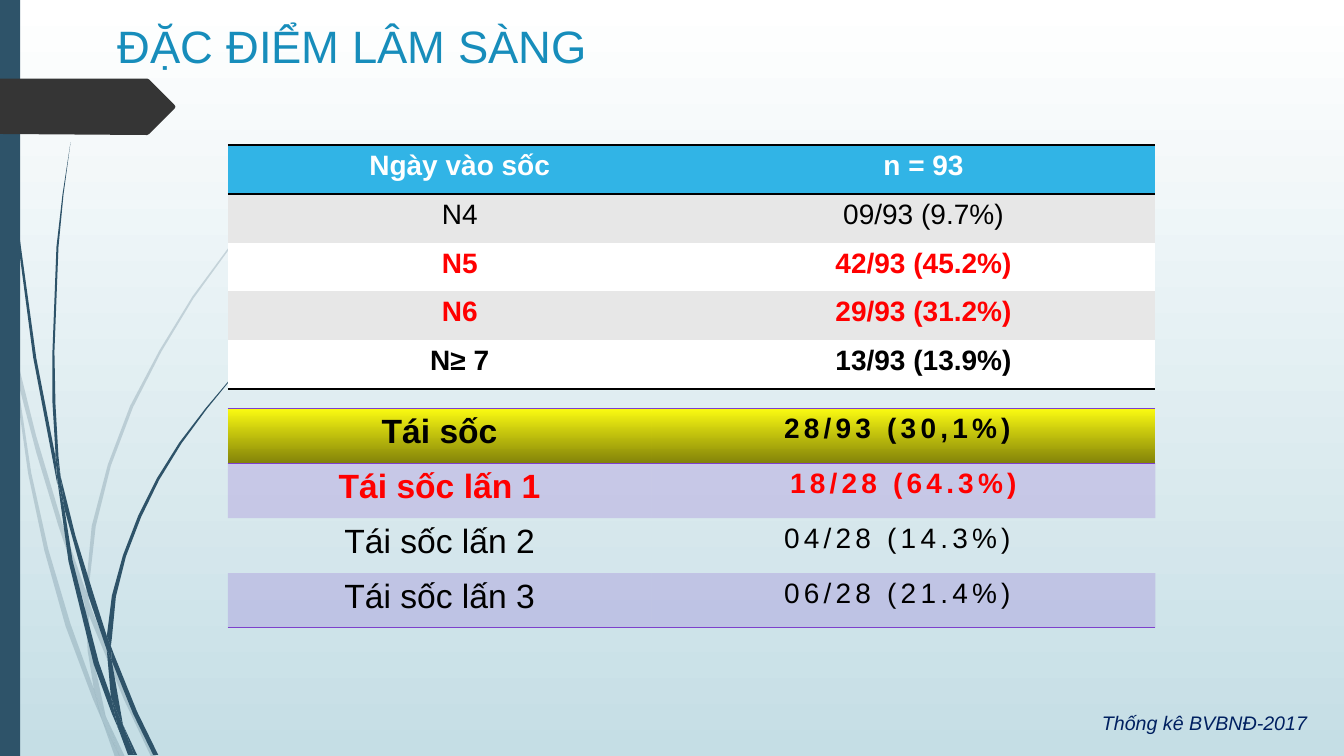
from dataclasses import dataclass

from lxml.etree import SubElement
from pptx import Presentation
from pptx.dml.color import RGBColor
from pptx.enum.shapes import MSO_SHAPE
from pptx.enum.text import MSO_ANCHOR, MSO_AUTO_SIZE, PP_ALIGN
from pptx.oxml import parse_xml
from pptx.oxml.ns import nsdecls, qn
from pptx.util import Emu, Pt

PX = 9144  # one px is a hundredth of an inch


@dataclass(frozen=True)
class Theme:
    font: str = "Arial"
    title: str = "178DBB"
    source: str = "002060"
    slate: str = "2E5369"
    tag: str = "353535"
    header: str = "31B4E6"
    band: str = "E7E7E7"
    white: str = "FFFFFF"
    black: str = "000000"
    red: str = "FF0000"
    violet: str = "7E40CC"
    sky: tuple = ("FFFFFF", "C5DEE5")
    gold: tuple = ("FBFB11", "838309")
    title_size: float = 32.4
    label_size: int = 24
    body_size: int = 20
    source_size: int = 14
    faint: int = 20


T = Theme()
NO_STYLE = "{2D5ABB26-0587-4C30-8999-92F81FD0307C}"

# Grass blades: outline points in px
PALE_BLADES = [
    [(0, 282), (9, 322), (11, 350), (10, 344), (0, 299)],
    [(14, 345), (36, 433), (62, 520), (85, 586), (84, 599), (58, 522),
     (36, 449), (17, 376)],
    [(88, 596), (92, 607), (127, 692), (155, 751), (150, 751), (123, 694), (88, 610)],
    [(105, 711), (124, 751), (119, 751)],
    [(11, 350), (17, 376), (31, 469), (48, 545), (70, 619), (93, 683), (101, 714),
     (92, 693), (65, 621), (44, 546), (28, 470)],
    [(84, 599), (88, 610), (91, 646), (105, 711), (96, 692), (93, 683), (87, 646)],
    [(85, 586), (91, 522), (107, 461), (129, 403), (158, 348), (191, 294),
     (228, 244), (268, 197), (289, 175), (312, 153), (290, 175), (268, 198),
     (229, 245), (192, 296), (160, 349), (132, 404), (110, 462), (95, 522),
     (88, 584), (88, 596)],
    [(101, 714), (119, 751), (114, 751)],
    [(85, 586), (88, 596), (88, 610), (84, 599)],
    [(93, 683), (96, 692), (105, 711), (119, 751), (101, 714), (99, 707)],
]
DARK_BLADES = [
    [(3, 0), (4, 48), (7, 110), (17, 233), (33, 355), (57, 481), (55, 453),
     (36, 355), (19, 232), (8, 109), (5, 48), (4, 0)],
    [(60, 472), (75, 532), (93, 590), (106, 631), (106, 645), (88, 592), (64, 505)],
    [(110, 641), (113, 649), (136, 706), (157, 749), (152, 749), (132, 708), (111, 656)],
    [(57, 477), (64, 505), (72, 556), (98, 657), (110, 691), (117, 722), (111, 708),
     (93, 659), (68, 557)],
    [(60, 472), (55, 449), (52, 399), (52, 349), (56, 245), (62, 193), (70, 141),
     (63, 193), (58, 245), (54, 349), (55, 401), (58, 453)],
    [(122, 719), (136, 749), (133, 749)],
    [(55, 449), (60, 472), (64, 505), (57, 477), (55, 453)],
    [(106, 631), (111, 591), (122, 551), (137, 512), (156, 474), (178, 439),
     (204, 405), (231, 373), (245, 358), (260, 344), (245, 359), (231, 374),
     (205, 406), (180, 440), (158, 476), (140, 513), (125, 552), (115, 592),
     (111, 633), (110, 641)],
    [(117, 722), (131, 749), (127, 749)],
    [(106, 645), (111, 656), (122, 719), (116, 706), (110, 691)],
    [(106, 631), (110, 641), (111, 656), (106, 645)],
    [(110, 691), (116, 706), (122, 719), (133, 749), (130, 749), (117, 722)],
]
TAG = [(0, 78), (146, 78), (148, 79), (173, 104), (174, 106), (173, 108),
       (148, 133), (146, 134), (0, 133)]


def px(n):
    return Emu(round(n * PX))


def rgb(code):
    return RGBColor.from_string(code)


def apply(obj, **values):
    for name, value in values.items():
        setattr(obj, name, value)


def paint(fill, props, color, alpha=None):
    """Fill with one colour, a top-to-bottom pair of colours, or nothing."""
    if color is None:
        fill.background()
    elif isinstance(color, tuple):
        fill.gradient()
        fill.gradient_angle = 270
        for stop, code in zip(fill.gradient_stops, color):
            stop.color.rgb = rgb(code)
    else:
        fill.solid()
        fill.fore_color.rgb = rgb(color)
        if alpha:
            clr = props.find(f"{qn('a:solidFill')}/{qn('a:srgbClr')}")
            SubElement(clr, qn("a:alpha"), val=str(alpha * 1000))


def write(tf, text, color, size, align=PP_ALIGN.LEFT, spacing=0, **values):
    p = tf.paragraphs[0]
    p.alignment = align
    r = p.add_run()
    r.text = text
    apply(r.font, name=T.font, size=Pt(size), **values)
    r.font.color.rgb = rgb(color)
    if spacing:
        r.font._element.set("spc", str(spacing * 100))


def finish(sp, color, alpha=None):
    sp.shadow.inherit = False
    sp.line.fill.background()
    paint(sp.fill, sp._element.spPr, color, alpha)


def add_outline(slide, points, color, alpha=None):
    start, *rest = [(px(x), px(y)) for x, y in points]
    builder = slide.shapes.build_freeform(*start, scale=1.0)
    builder.add_line_segments(rest, close=True)
    finish(builder.convert_to_shape(), color, alpha)


def add_borders(cell, sides, color, width):
    tcPr = cell._tc.get_or_add_tcPr()
    for i, side in enumerate(sides):
        tcPr.insert(i, parse_xml(
            f'<a:ln{side} {nsdecls("a")} w="{Pt(width)}"><a:solidFill>'
            f'<a:srgbClr val="{color}"/></a:solidFill></a:ln{side}>'))


def add_grid(slide, box, widths, rows, sizes, spacings, border):
    """Rows hold: texts, text colour, bold, fill, fill alpha."""
    table = slide.shapes.add_table(len(rows), len(widths), *map(px, box)).table
    apply(table, first_row=False, horz_banding=False)
    table._tbl.tblPr.find(qn("a:tableStyleId")).text = NO_STYLE
    for col, width in zip(table.columns, widths):
        col.width = px(width)
    for i, (texts, color, bold, fill, alpha) in enumerate(rows):
        table.rows[i].height = px(box[3] / len(rows))
        sides = "TB" if i == 0 else "B" if i == len(rows) - 1 else ""
        for j, text in enumerate(texts):
            cell = table.cell(i, j)
            write(cell.text_frame, text, color, sizes[j], PP_ALIGN.CENTER,
                  spacings[j], bold=bold)
            paint(cell.fill, cell._tc.get_or_add_tcPr(), fill, alpha)
            add_borders(cell, sides, *border)


def add_title(slide, box, text):
    sp = slide.shapes.title
    apply(sp, **dict(zip(("left", "top", "width", "height"), map(px, box))))
    apply(sp.text_frame, vertical_anchor=MSO_ANCHOR.TOP, word_wrap=True,
          auto_size=MSO_AUTO_SIZE.NONE)
    write(sp.text_frame, text, T.title, T.title_size)


def add_source(slide, box, text):
    tf = slide.shapes.add_textbox(*map(px, box)).text_frame
    apply(tf, word_wrap=False, auto_size=MSO_AUTO_SIZE.SHAPE_TO_FIT_TEXT)
    write(tf, text, T.source, T.source_size, italic=True)


def main():
    prs = Presentation()
    apply(prs, slide_width=px(1333), slide_height=px(750))
    slide = prs.slides.add_slide(prs.slide_layouts[5])
    paint(slide.background.fill, None, T.sky)

    # Side decoration
    for blades, alpha in ((PALE_BLADES, T.faint), (DARK_BLADES, None)):
        for blade in blades:
            add_outline(slide, blade, T.slate, alpha)
    bar = slide.shapes.add_shape(MSO_SHAPE.RECTANGLE, 0, 0, px(20), px(750))
    finish(bar, T.slate)
    add_outline(slide, TAG, T.tag)

    # Day of shock
    add_grid(slide, (226, 144, 920, 242), (460, 460), [
        (("Ngày vào sốc", "n = 93"), T.white, True, T.header, None),
        (("N4", "09/93 (9.7%)"), T.black, False, T.band, None),
        (("N5", "42/93 (45.2%)"), T.red, True, T.white, None),
        (("N6", "29/93 (31.2%)"), T.red, True, T.band, None),
        (("N≥ 7", "13/93 (13.9%)"), T.black, True, T.white, None),
    ], (T.body_size, T.body_size), (0, 0), (T.black, 2))

    # Recurrent shock
    add_grid(slide, (226, 405, 920, 218), (420, 500), [
        (("Tái sốc", "28/93 (30,1%) "), T.black, True, T.gold, None),
        (("Tái sốc lấn 1", "18/28 (64.3%)"), T.red, True, T.violet, T.faint),
        (("Tái sốc lấn 2", "04/28 (14.3%) "), T.black, False, None, None),
        (("Tái sốc lấn 3", "06/28 (21.4%) "), T.black, False, T.violet, T.faint),
    ], (T.label_size, T.body_size), (0, 3), (T.violet, 0.75))

    # Title and source
    add_title(slide, (107, 13, 975, 61), "ĐẶC ĐIỂM LÂM SÀNG")
    add_source(slide, (1083, 700, 231, 34), "Thống kê BVBNĐ-2017")
    prs.save("out.pptx")


if __name__ == "__main__":
    main()
